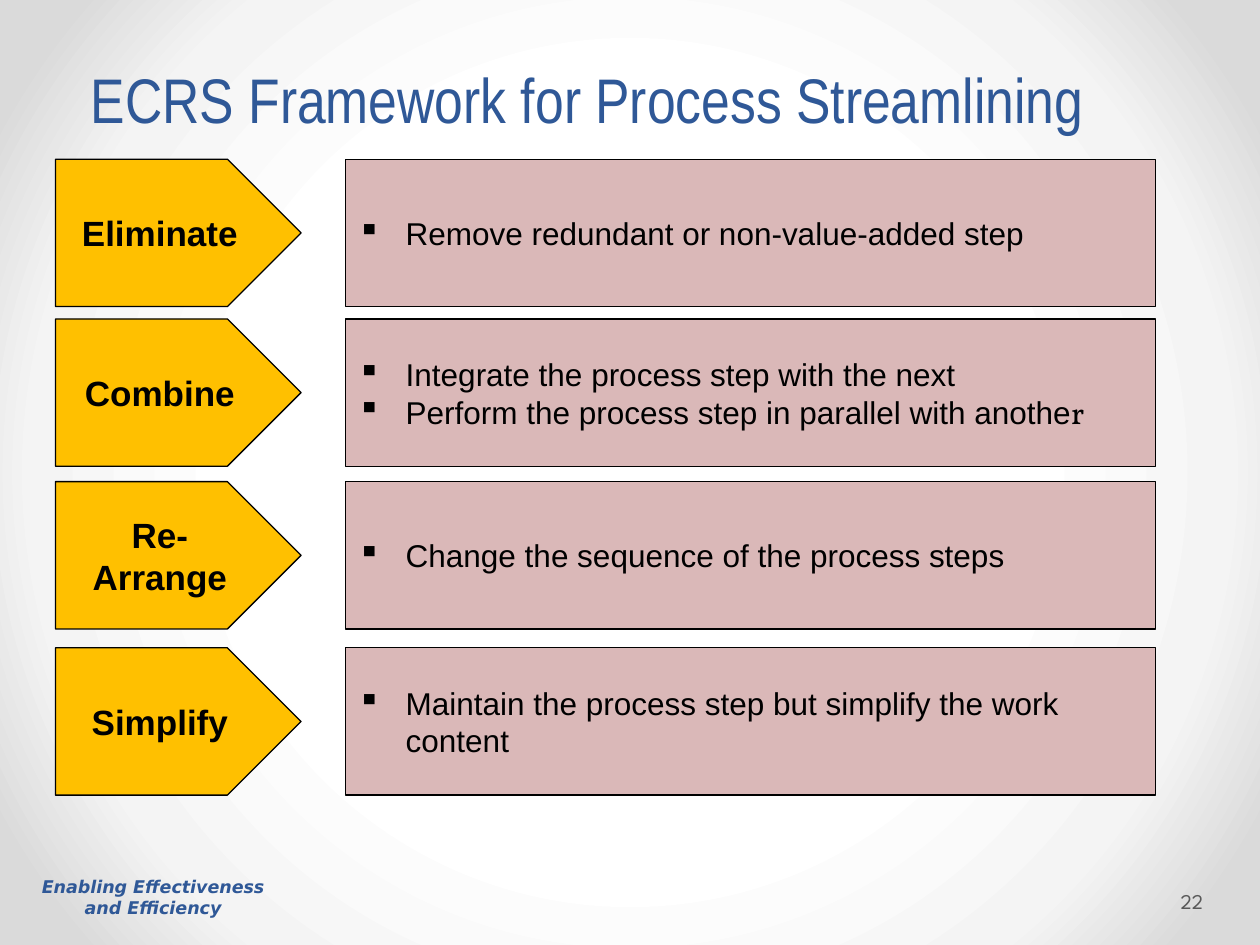
from dataclasses import dataclass

import pptx
import pptx.dml.color
import pptx.enum.shapes
import pptx.enum.text
import pptx.oxml
import pptx.oxml.ns
import pptx.util
from pptx.util import Cm

SHAPE = pptx.enum.shapes.MSO_SHAPE
ALIGN = pptx.enum.text.PP_ALIGN
ANCHOR = pptx.enum.text.MSO_ANCHOR


@dataclass(frozen=True)
class Style:
    font: str
    size: int
    color: str
    bold: bool = False
    italic: bool = False


@dataclass(frozen=True)
class Theme:
    title: Style = Style("Arial Narrow", 36, "2F5897")
    footer: Style = Style("DejaVu Sans", 10, "2F5897", True, True)
    number: Style = Style("League Spartan", 12, "595959")
    step: Style = Style("Arial", 20, "000000", True)
    detail: Style = Style("Arial", 18, "000000")
    detail_end: Style = Style("Vollkorn", 18, "000000")
    arrow_fill: str = "FFC000"
    box_fill: str = "DAB8B8"
    outline: str = "000000"
    background: tuple = ((50, "FFFFFF"), (76, "F4F4F4"), (92, "DADADA"))


@dataclass(frozen=True)
class Step:
    name: str
    top: float
    details: tuple
    ending: str = ""  # last letters, set in the second typeface


THEME = Theme()
ROW_H = 2.97
ARROW_X, ARROW_W = 1.12, 4.95
BOX_X, BOX_W = 6.96, 16.33
INDENT = Cm(0.97)

STEPS = [
    Step("Eliminate", 3.21, ("Remove redundant or non-value-added step",)),
    Step("Combine", 6.43, ("Integrate the process step with the next",
                           "Perform the process step in parallel with anothe"), "r"),
    Step("Re-Arrange", 9.71, ("Change the sequence of the process steps",)),
    Step("Simplify", 13.06, ("Maintain the process step but simplify the work content",)),
]


def rgb(color: str):
    return pptx.dml.color.RGBColor.from_string(color)


def style_run(r, style: Style) -> None:
    r.font.name = style.font
    r.font.size = pptx.util.Pt(style.size)
    r.font.color.rgb = rgb(style.color)
    r.font.bold = style.bold
    r.font.italic = style.italic


def fill_text(tf, text: str, style: Style, align, anchor) -> None:
    tf.word_wrap = True
    tf.vertical_anchor = anchor
    tf.text = text
    for p in tf.paragraphs:
        p.alignment = align
        for r in p.runs:
            style_run(r, style)


def add_text(s, box: tuple, text: str, style: Style, align, anchor):
    sp = s.shapes.add_textbox(*map(Cm, box))
    fill_text(sp.text_frame, text, style, align, anchor)
    return sp.text_frame


def add_block(s, kind, box: tuple, fill: str, text: str, style: Style, align):
    sp = s.shapes.add_shape(kind, *map(Cm, box))
    sp.shadow.inherit = False
    sp.fill.solid()
    sp.fill.fore_color.rgb = rgb(fill)
    sp.line.color.rgb = rgb(THEME.outline)
    sp.line.width = pptx.util.Pt(0.75)
    fill_text(sp.text_frame, text, style, align, ANCHOR.MIDDLE)
    return sp.text_frame


def add_bullet(p) -> None:
    pPr = p._p.get_or_add_pPr()
    pPr.set("marL", str(INDENT))
    pPr.set("indent", str(-INDENT))
    bullet = pptx.oxml.ns.qn("a:buChar")
    pPr.makeelement(bullet)
    pPr.append(pPr.makeelement(bullet, {"char": "▪"}))


def set_background(s) -> None:
    s.background.fill.gradient()
    old = s.element.find(".//" + pptx.oxml.ns.qn("a:gradFill"))
    stops = "".join(f'<a:gs pos="{pos * 1000}"><a:srgbClr val="{color}"/></a:gs>'
                    for pos, color in THEME.background)
    new = pptx.oxml.parse_xml(
        f'<a:gradFill {pptx.oxml.ns.nsdecls("a")} rotWithShape="1"><a:gsLst>{stops}</a:gsLst>'
        '<a:path path="circle"><a:fillToRect l="50000" t="50000" r="50000" b="50000"/></a:path>'
        '</a:gradFill>')
    old.getparent().replace(old, new)


def add_step(s, step: Step) -> None:
    add_block(s, SHAPE.PENTAGON, (ARROW_X, step.top, ARROW_W, ROW_H),
              THEME.arrow_fill, step.name, THEME.step, ALIGN.CENTER)
    tf = add_block(s, SHAPE.RECTANGLE, (BOX_X, step.top, BOX_W, ROW_H),
                   THEME.box_fill, "\n".join(step.details), THEME.detail, ALIGN.LEFT)
    for p in tf.paragraphs:
        add_bullet(p)
    if step.ending:
        r = tf.paragraphs[-1].add_run()
        r.text = step.ending
        style_run(r, THEME.detail_end)


def main() -> None:
    prs = pptx.Presentation()
    prs.slide_width, prs.slide_height = Cm(25.4), Cm(19.05)
    s = prs.slides.add_slide(prs.slide_layouts[6])
    set_background(s)

    # Title
    tf = add_text(s, (1.19, 0.53, 21.31, 2.34), "ECRS Framework for Process Streamlining",
                  THEME.title, ALIGN.CENTER, ANCHOR.BOTTOM)
    tf.paragraphs[0].line_spacing = pptx.util.Pt(58)

    # Steps with their explanations
    for step in STEPS:
        add_step(s, step)

    # Footer and page number
    add_text(s, (0.48, 17.53, 5.21, 1.12), "Enabling Effectiveness\nand Efficiency",
             THEME.footer, ALIGN.CENTER, ANCHOR.TOP)
    tf = add_text(s, (23.72, 17.65, 1.55, 1.02), "22", THEME.number, ALIGN.LEFT, ANCHOR.MIDDLE)
    tf.margin_left, tf.margin_right = Cm(0.08), Cm(0.13)

    prs.save("out.pptx")


if __name__ == "__main__":
    main()
